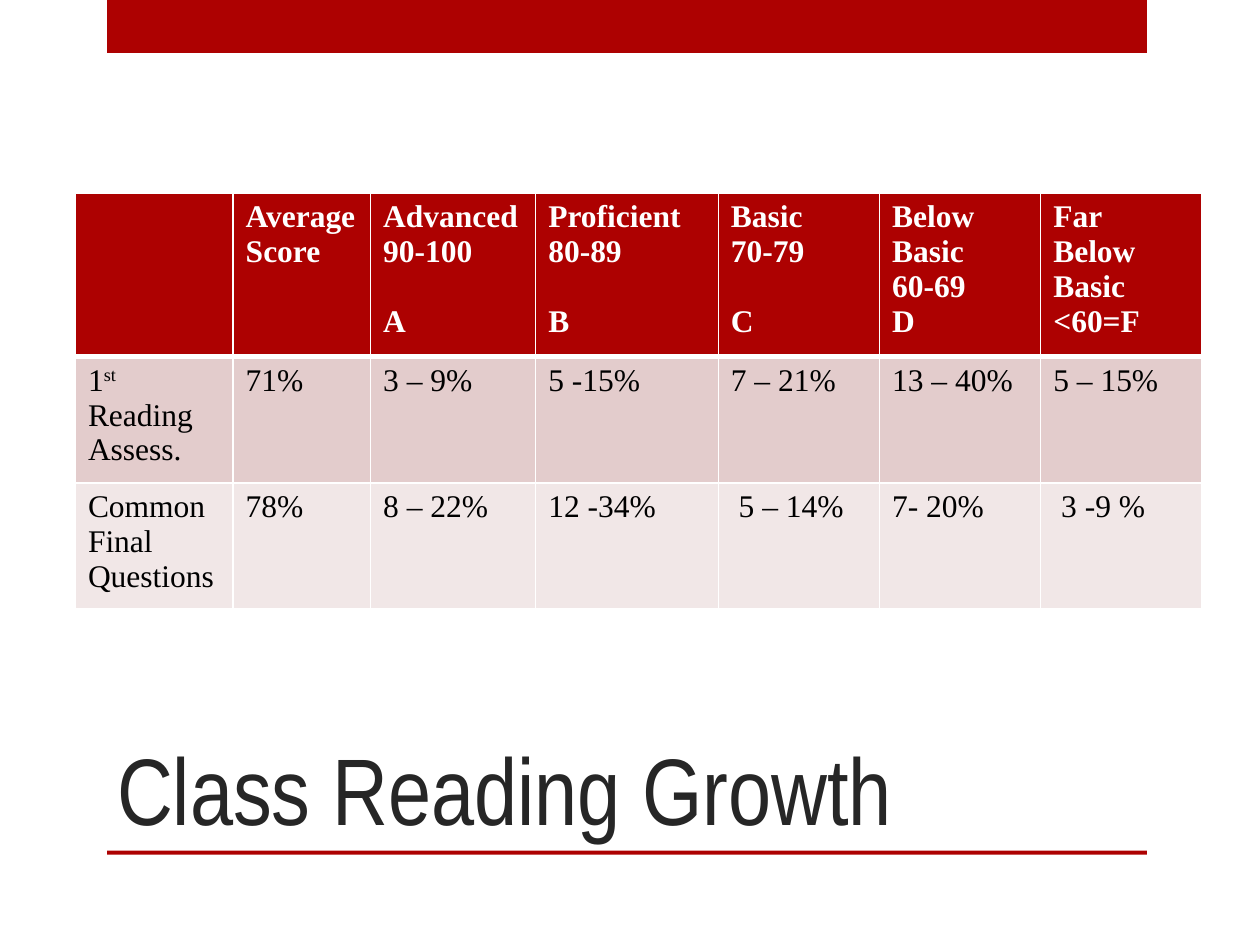
from dataclasses import dataclass

import pptx
import pptx.dml.color
import pptx.enum.shapes
import pptx.enum.text
import pptx.oxml.ns
import pptx.util
from lxml import etree
from pptx.util import Cm

RED, WHITE, BLACK = "AD0101", "FFFFFF", "000000"
TITLE_COLOR = "262626"
TITLE_FONT, TABLE_FONT = "Arial Narrow", "Times New Roman"
GRADE_GAP = 20  # points, one table line


@dataclass
class Bar:
    top: float
    height: float


@dataclass
class Level:
    name: str
    scores: str
    grade: str = ""
    gap: float = 0

    def lines(self) -> list[str]:
        return [line for line in (self.name, self.scores, self.grade) if line]


@dataclass
class Assessment:
    name: list[str]
    results: list[str]
    fill: str


BARS = [Bar(0, 1.07), Bar(17.15, 0.08)]
LEVELS = [
    Level("Advanced", "90-100", "A", GRADE_GAP),
    Level("Proficient", "80-89", "B", GRADE_GAP),
    Level("Basic", "70-79", "C", GRADE_GAP),
    Level("Below Basic", "60-69", "D"),
    Level("Far Below Basic", "<60=F"),
]
ASSESSMENTS = [
    Assessment(["1^st^ Reading", "Assess."],
               ["71%", "3 – 9%", "5 -15%", "7 – 21%", "13 – 40%", "5 – 15%"], "E3CCCC"),
    Assessment(["Common", "Final", "Questions"],
               ["78%", "8 – 22%", "12 -34%", " 5 – 14%", "7- 20%", " 3 -9 %"], "F1E7E7"),
]
COLUMN_WIDTHS = [3.18, 2.77, 3.33, 3.68, 3.25, 3.25, 3.25]
ROW_HEIGHTS = [3.07, 2.36, 2.36]


def rgb(value: str) -> pptx.dml.color.RGBColor:
    return pptx.dml.color.RGBColor.from_string(value)


def write_text(frame, lines: list[str], *, font: str, size: float, color: str,
               bold: bool = False, last_gap: float = 0) -> None:
    """Write one paragraph per line; text between ^ marks is superscript."""
    for index, line in enumerate(lines):
        paragraph = frame.paragraphs[0] if index == 0 else frame.add_paragraph()
        if last_gap and index == len(lines) - 1:
            paragraph.space_before = pptx.util.Pt(last_gap)
        for part, text in enumerate(line.split("^")):
            run = paragraph.add_run()
            run.text = text
            run.font.name = font
            run.font.size = pptx.util.Pt(size)
            run.font.bold = bold
            run.font.color.rgb = rgb(color)
            if part % 2:
                run._r.get_or_add_rPr().set("baseline", "30000")


def add_bar(slide, bar: Bar) -> None:
    shape = slide.shapes.add_shape(pptx.enum.shapes.MSO_SHAPE.RECTANGLE,
                                   Cm(2.16), Cm(bar.top), Cm(20.96), Cm(bar.height))
    shape.shadow.inherit = False
    shape.fill.solid()
    shape.fill.fore_color.rgb = rgb(RED)
    shape.line.fill.background()


def set_borders(cell, top: float, bottom: float) -> None:
    properties = cell._tc.get_or_add_tcPr()
    for side, width in (("L", 1), ("R", 1), ("T", top), ("B", bottom)):
        line = etree.SubElement(properties, pptx.oxml.ns.qn(f"a:ln{side}"),
                                w=str(pptx.util.Pt(width)))
        fill = etree.SubElement(line, pptx.oxml.ns.qn("a:solidFill"))
        etree.SubElement(fill, pptx.oxml.ns.qn("a:srgbClr"), val=WHITE)


def fill_cell(cell, lines: list[str], fill: str, *, header: bool = False,
              top: float = 1, gap: float = 0) -> None:
    set_borders(cell, top, 3 if header else 1)
    cell.fill.solid()
    cell.fill.fore_color.rgb = rgb(fill)
    write_text(cell.text_frame, lines, font=TABLE_FONT, size=18,
               color=WHITE if header else BLACK, bold=header, last_gap=gap)


def add_results_table(slide) -> None:
    table = slide.shapes.add_table(len(ROW_HEIGHTS), len(COLUMN_WIDTHS), Cm(1.52), Cm(3.89),
                                   Cm(sum(COLUMN_WIDTHS)), Cm(sum(ROW_HEIGHTS))).table
    table.first_row = table.horz_banding = False
    for column, width in zip(table.columns, COLUMN_WIDTHS):
        column.width = Cm(width)
    for row, height in zip(table.rows, ROW_HEIGHTS):
        row.height = Cm(height)

    fill_cell(table.cell(0, 0), [], RED, header=True)
    fill_cell(table.cell(0, 1), ["Average Score"], RED, header=True)
    for column, level in enumerate(LEVELS, start=2):
        fill_cell(table.cell(0, column), level.lines(), RED, header=True, gap=level.gap)
    for row, assessment in enumerate(ASSESSMENTS, start=1):
        cells = [assessment.name] + [[result] for result in assessment.results]
        for column, lines in enumerate(cells):
            fill_cell(table.cell(row, column), lines, assessment.fill, top=3 if row == 1 else 1)


def add_title(slide) -> None:
    frame = slide.shapes.add_textbox(Cm(2.11), Cm(12.7), Cm(18.85), Cm(4.45)).text_frame
    frame.word_wrap = True
    frame.vertical_anchor = pptx.enum.text.MSO_ANCHOR.BOTTOM
    write_text(frame, ["Class Reading Growth"], font=TITLE_FONT, size=54, color=TITLE_COLOR)


def main() -> None:
    presentation = pptx.Presentation()
    presentation.slide_width, presentation.slide_height = Cm(25.4), Cm(19.05)
    slide = presentation.slides.add_slide(presentation.slide_layouts[6])
    for bar in BARS:
        add_bar(slide, bar)
    add_title(slide)
    add_results_table(slide)
    presentation.save("out.pptx")


if __name__ == "__main__":
    main()
